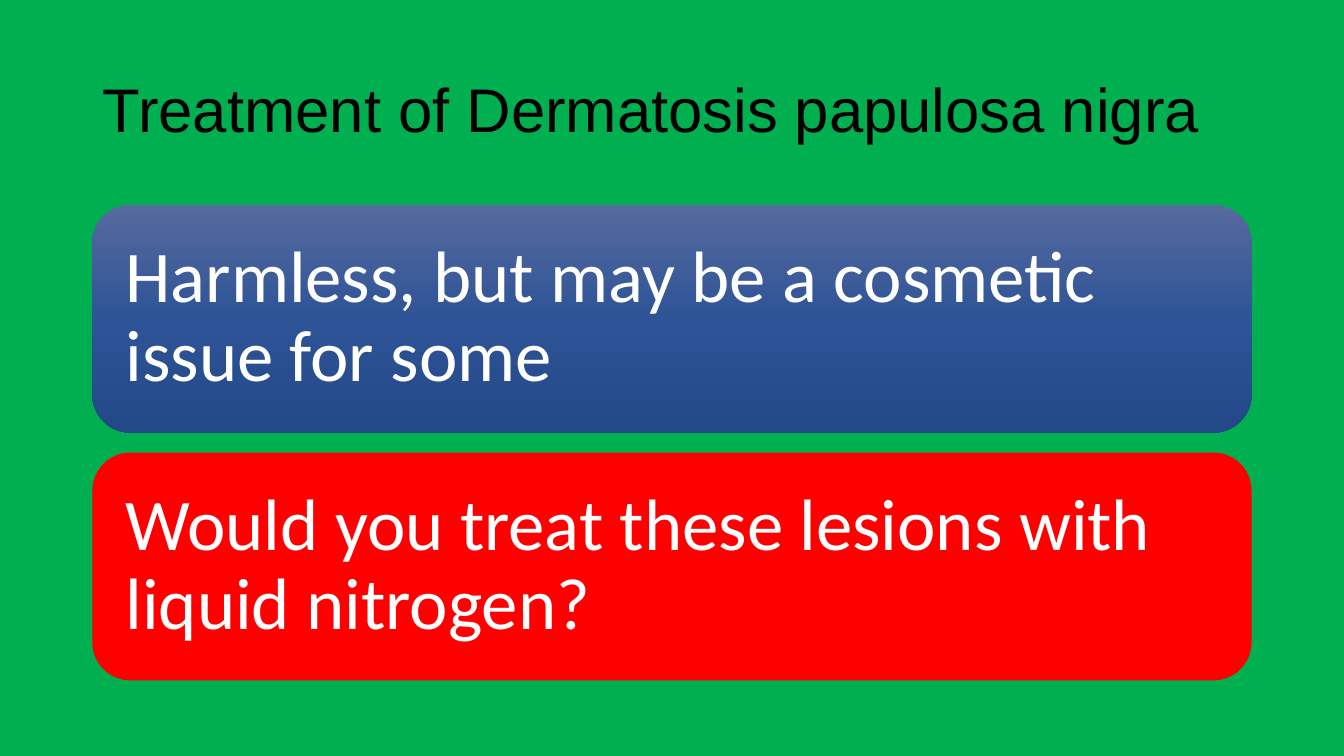
from copy import deepcopy

from pptx import Presentation
from pptx.dml.color import RGBColor
from pptx.enum.shapes import MSO_SHAPE
from pptx.enum.text import MSO_ANCHOR, PP_ALIGN
from pptx.oxml.ns import qn
from pptx.util import Pt

ROUNDED = MSO_SHAPE.ROUNDED_RECTANGLE
MIDDLE = MSO_ANCHOR.MIDDLE
LEFT = PP_ALIGN.LEFT

GREEN = RGBColor(0x00, 0xB0, 0x50)
BLACK = RGBColor(0x00, 0x00, 0x00)
WHITE = RGBColor(0xFF, 0xFF, 0xFF)
RED = RGBColor(0xFF, 0x00, 0x00)
BLUE_STOPS = [
    (0, RGBColor(0x56, 0x6B, 0x9E)),
    (0.5, RGBColor(0x2E, 0x53, 0x96)),
    (1, RGBColor(0x24, 0x49, 0x89)),
]

PX = 9525  # EMU per px, 96 px to the inch
MARGIN, WIDTH = 88, 1104
BOX_TOP, BOX_HEIGHT, BOX_PITCH = 195, 217, 236


def write_text(shape, text, *, size, font, color, inset):
    frame = shape.text_frame
    frame.word_wrap = True
    frame.vertical_anchor = MIDDLE
    frame.margin_left = frame.margin_right = inset * PX
    frame.margin_top = frame.margin_bottom = inset * PX
    paragraph = frame.paragraphs[0]
    paragraph.alignment = LEFT
    paragraph.line_spacing = 0.9
    run = paragraph.add_run()
    run.text = text
    run.font.size = Pt(size)
    run.font.name = font
    run.font.color.rgb = color


def fill_gradient(shape, stops):
    fill = shape.fill
    fill.gradient()
    fill.gradient_angle = 270  # counter-clockwise: runs top to bottom
    stop_list = shape._element.spPr.find(qn("a:gradFill")).find(qn("a:gsLst"))
    while len(stop_list) < len(stops):
        stop_list.append(deepcopy(stop_list[0]))
    for stop, (position, color) in zip(fill.gradient_stops, stops):
        stop.position = position
        stop.color.rgb = color


presentation = Presentation()
presentation.slide_width = 1280 * PX
presentation.slide_height = 720 * PX
slide = presentation.slides.add_slide(presentation.slide_layouts[6])

# Background
slide.background.fill.solid()
slide.background.fill.fore_color.rgb = GREEN

# Title
title = slide.shapes.add_textbox(MARGIN * PX, 38 * PX, WIDTH * PX, 139 * PX)
write_text(title, "Treatment of Dermatosis papulosa nigra",
           size=44, font="Arial", color=BLACK, inset=10)

# Statement boxes
statements = [
    ("Harmless, but may be a cosmetic issue for some", BLUE_STOPS),
    ("Would you treat these lesions with liquid nitrogen?", RED),
]
for index, (statement, paint) in enumerate(statements):
    top = BOX_TOP + index * BOX_PITCH
    box = slide.shapes.add_shape(
        ROUNDED, MARGIN * PX, top * PX, WIDTH * PX, BOX_HEIGHT * PX)
    box.shadow.inherit = False
    box.line.fill.background()
    if paint is BLUE_STOPS:
        fill_gradient(box, paint)
    else:
        box.fill.solid()
        box.fill.fore_color.rgb = paint
    write_text(box, statement, size=52, font="Calibri", color=WHITE, inset=21)

presentation.save("out.pptx")
